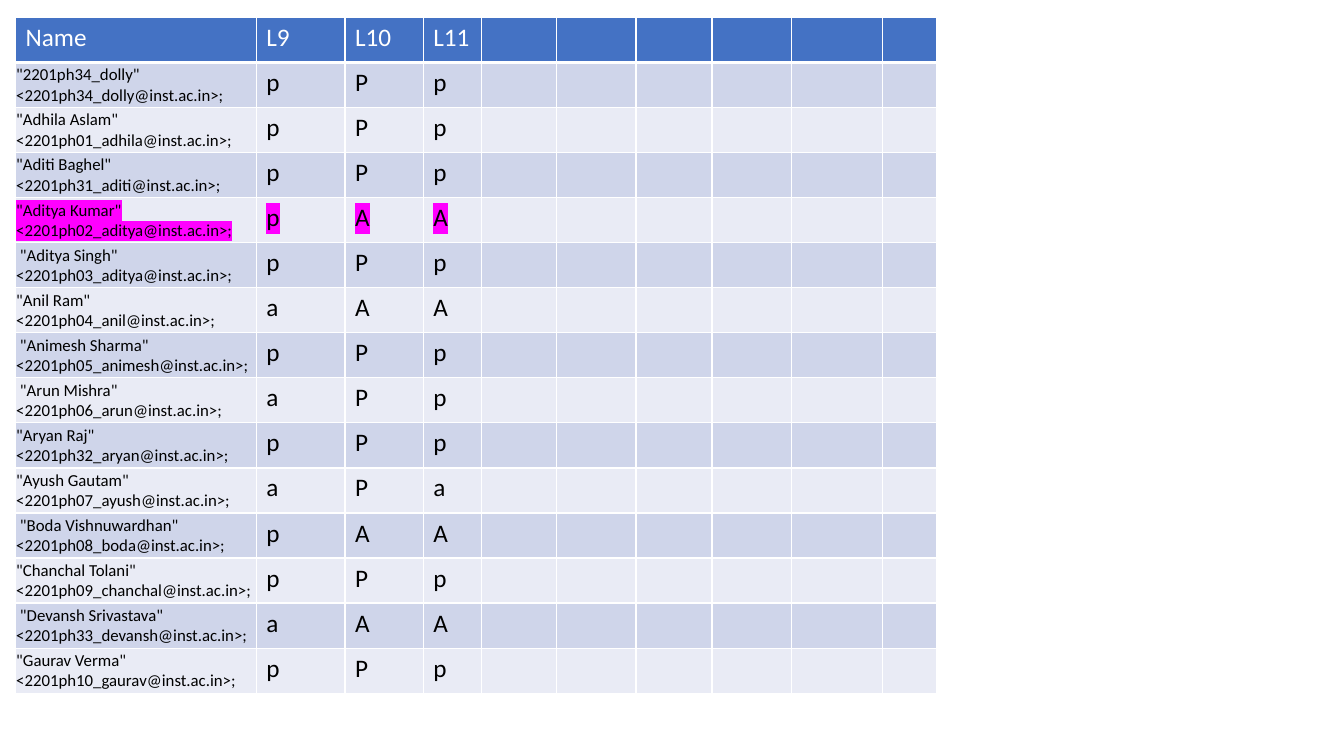
from dataclasses import dataclass

from lxml import etree
from pptx import Presentation
from pptx import util as u
from pptx.dml.color import RGBColor
from pptx.enum import text
from pptx.oxml import ns


@dataclass(frozen=True)
class Theme:
    font: str = "Calibri"
    body_size: float = 18
    name_size: float = 12
    header_fill: str = "4472C4"
    band_fills: tuple[str, str] = ("CFD5EA", "E9EBF5")
    header_text: str = "FFFFFF"
    body_text: str = "000000"
    border: str = "FFFFFF"
    highlight: str = "FF00FF"


@dataclass(frozen=True)
class Student:
    name: str
    account: str
    marks: str
    highlighted: bool = False

    @property
    def label(self) -> str:
        return f"{self.name} <{self.account}@inst.ac.in>;"


THEME = Theme()
HEADERS = ("Name", "L9", "L10", "L11")
COLUMN_WIDTHS = (172, 63.4, 55.9, 41.3, 53.7, 57, 54.3, 56.8, 64.8, 38.5)
ROW_HEIGHT = 32.2
TABLE_LEFT, TABLE_TOP = 11.1, 12.5
STUDENTS = (
    Student('"2201ph34_dolly"', "2201ph34_dolly", "pPp"),
    Student('"Adhila Aslam"', "2201ph01_adhila", "pPp"),
    Student('"Aditi Baghel"', "2201ph31_aditi", "pPp"),
    Student('"Aditya Kumar"', "2201ph02_aditya", "pAA", highlighted=True),
    Student(' "Aditya Singh"', "2201ph03_aditya", "pPp"),
    Student('"Anil Ram"', "2201ph04_anil", "aAA"),
    Student(' "Animesh Sharma"', "2201ph05_animesh", "pPp"),
    Student(' "Arun Mishra"', "2201ph06_arun", "aPp"),
    Student('"Aryan Raj"', "2201ph32_aryan", "pPp"),
    Student('"Ayush Gautam"', "2201ph07_ayush", "aPa"),
    Student(' "Boda Vishnuwardhan"', "2201ph08_boda", "pAA"),
    Student('"Chanchal Tolani"', "2201ph09_chanchal", "pPp"),
    Student(' "Devansh Srivastava"', "2201ph33_devansh", "aAA"),
    Student('"Gaurav Verma"', "2201ph10_gaurav", "pPp"),
)


def add_color(parent, color: str) -> None:
    etree.SubElement(parent, ns.qn("a:srgbClr"), val=color)


def style_cell(cell, fill: str, bottom_width: float = 1) -> None:
    """Set the borders first, as the fill must follow them in the XML."""
    properties = cell._tc.get_or_add_tcPr()
    for side, width in (("L", 1), ("R", 1), ("T", 1), ("B", bottom_width)):
        line = etree.SubElement(properties, ns.qn(f"a:ln{side}"), w=str(u.Pt(width)))
        add_color(etree.SubElement(line, ns.qn("a:solidFill")), THEME.border)
    cell.fill.solid()
    cell.fill.fore_color.rgb = RGBColor.from_string(fill)


def highlight_run(run) -> None:
    highlight = etree.Element(ns.qn("a:highlight"))
    add_color(highlight, THEME.highlight)
    run._r.get_or_add_rPr().find(ns.qn("a:solidFill")).addnext(highlight)


def write_cell(cell, content: str, size: float, color: str, highlighted: bool = False) -> None:
    cell.text_frame.text = content
    for run in cell.text_frame.paragraphs[0].runs:
        run.font.name = THEME.font
        run.font.size = u.Pt(size)
        run.font.bold = False
        run.font.color.rgb = RGBColor.from_string(color)
        if highlighted:
            highlight_run(run)


def fill_header(table) -> None:
    for column in range(len(COLUMN_WIDTHS)):
        style_cell(table.cell(0, column), THEME.header_fill, bottom_width=3)
    for column, header in enumerate(HEADERS):
        write_cell(table.cell(0, column), header, THEME.body_size, THEME.header_text)


def fill_student(table, row: int, student: Student) -> None:
    for column in range(len(COLUMN_WIDTHS)):
        style_cell(table.cell(row, column), THEME.band_fills[(row - 1) % 2])
    name_cell = table.cell(row, 0)
    name_cell.vertical_anchor = text.MSO_ANCHOR.MIDDLE
    name_cell.margin_left = name_cell.margin_right = name_cell.margin_top = u.Pt(0.5)
    name_cell.margin_bottom = u.Pt(0)
    write_cell(name_cell, student.label, THEME.name_size, THEME.body_text, student.highlighted)
    for column, mark in enumerate(student.marks, start=1):
        write_cell(table.cell(row, column), mark, THEME.body_size, THEME.body_text,
                   student.highlighted)


def add_attendance_table(slide) -> None:
    row_count = len(STUDENTS) + 1
    table = slide.shapes.add_table(
        row_count, len(COLUMN_WIDTHS), u.Pt(TABLE_LEFT), u.Pt(TABLE_TOP),
        u.Pt(sum(COLUMN_WIDTHS)), u.Pt(ROW_HEIGHT * row_count),
    ).table
    for column, width in zip(table.columns, COLUMN_WIDTHS):
        column.width = u.Pt(width)
    for row in table.rows:
        row.height = u.Pt(ROW_HEIGHT)
    fill_header(table)
    for row_index, student in enumerate(STUDENTS, start=1):
        fill_student(table, row_index, student)


def main() -> None:
    presentation = Presentation()
    presentation.slide_width = u.Pt(960)
    presentation.slide_height = u.Pt(540)
    slide = presentation.slides.add_slide(presentation.slide_layouts[6])
    add_attendance_table(slide)
    presentation.save("out.pptx")


if __name__ == "__main__":
    main()
